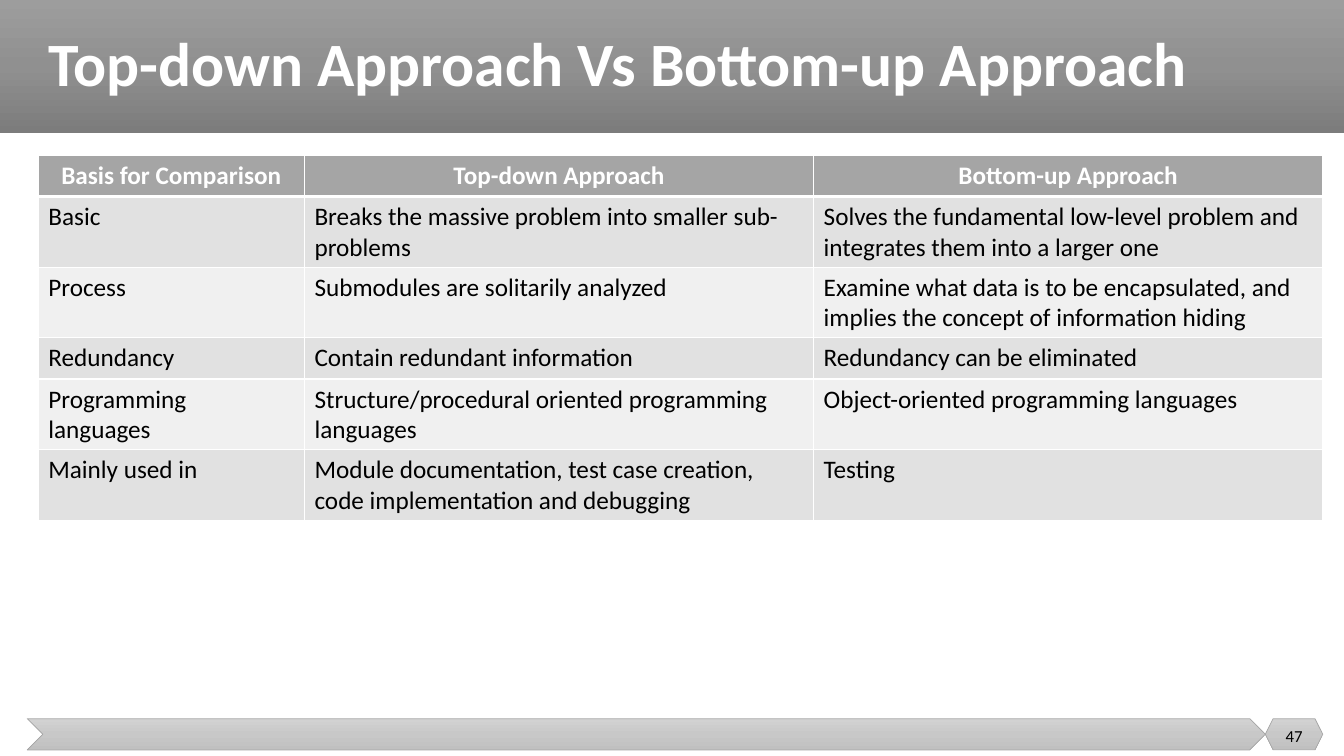
from copy import deepcopy
from dataclasses import dataclass

from lxml.etree import SubElement
from pptx import Presentation
from pptx.dml.color import RGBColor
from pptx.enum.shapes import MSO_SHAPE
from pptx.enum.text import MSO_ANCHOR, PP_ALIGN
from pptx.oxml.ns import qn
from pptx.util import Inches, Pt


@dataclass(frozen=True)
class Theme:
    font: str = "Calibri"
    title_size: int = 44
    table_size: int = 18
    number_size: int = 12
    light: str = "FFFFFF"
    dark: str = "000000"
    accent: str = "A5A5A5"
    bands: tuple = ("E1E1E1", "F0F0F0")
    banner: tuple = ("9D9D9D", "909090", "7C7C7C")
    footer: tuple = ("D2D2D2", "C8C8C8", "C0C0C0")


THEME = Theme()

ROWS = [
    ("Basis for Comparison", "Top-down Approach", "Bottom-up Approach"),
    ("Basic", "Breaks the massive problem into smaller sub-problems",
     "Solves the fundamental low-level problem and integrates them into a larger one"),
    ("Process", "Submodules are solitarily analyzed",
     "Examine what data is to be encapsulated, and implies the concept of information hiding"),
    ("Redundancy", "Contain redundant information", "Redundancy can be eliminated"),
    ("Programming languages", "Structure/procedural oriented programming languages",
     "Object-oriented programming languages"),
    ("Mainly used in",
     "Module documentation, test case creation, code implementation and debugging", "Testing"),
]


def write(tf, text, size, color, bold=False, align=PP_ALIGN.LEFT):
    tf.text = text
    p = tf.paragraphs[0]
    p.alignment = align
    font = p.runs[0].font
    font.name = THEME.font
    font.size = Pt(size)
    font.bold = bold
    font.color.rgb = RGBColor.from_string(color)
    return p


def add_text(s, box, text, size, color, **style):
    tf = s.shapes.add_textbox(*map(Inches, box)).text_frame
    tf.word_wrap = True
    tf.vertical_anchor = MSO_ANCHOR.MIDDLE
    return write(tf, text, size, color, **style)


def add_gradient_shape(s, kind, box, colors, line=None):
    sp = s.shapes.add_shape(kind, *map(Inches, box))
    sp.shadow.inherit = False
    sp.fill.gradient()
    sp.fill.gradient_angle = 270
    stops = sp._element.spPr.find(".//" + qn("a:gsLst"))
    stops.append(deepcopy(stops[0]))
    for i, (stop, color) in enumerate(zip(sp.fill.gradient_stops, colors)):
        stop.position = i / (len(colors) - 1)
        stop.color.rgb = RGBColor.from_string(color)
    if line:
        sp.line.color.rgb = RGBColor.from_string(line)
        sp.line.width = Pt(0.5)
    else:
        sp.line.fill.background()


def add_banner(s, box, title):
    left, top, width, height = box
    add_gradient_shape(s, MSO_SHAPE.RECTANGLE, box, THEME.banner)
    p = add_text(s, (left + 0.38, top, width - 0.59, height), title,
                 THEME.title_size, THEME.light, bold=True)
    p.line_spacing = 0.9


def set_borders(cell, widths):
    tcPr = cell._tc.get_or_add_tcPr()
    for side, width in widths.items():
        ln = SubElement(tcPr, qn("a:ln" + side), w=str(Pt(width)))
        fill = SubElement(ln, qn("a:solidFill"))
        SubElement(fill, qn("a:srgbClr"), val=THEME.light)


def add_comparison(s, box, rows):
    left, top, width, row_height = box
    table = s.shapes.add_table(len(rows), len(rows[0]), *map(
        Inches, (left, top, width, row_height * len(rows)))).table
    label_width = 2.64
    approach_width = (width - label_width) / 2
    for column, w in zip(table.columns, (label_width, approach_width, approach_width)):
        column.width = Inches(w)
    for i, row in enumerate(rows):
        header = i == 0
        table.rows[i].height = Inches(row_height)
        fill = THEME.accent if header else THEME.bands[(i - 1) % 2]
        borders = {"L": 1, "R": 1, "T": 3 if i == 1 else 1, "B": 3 if header else 1}
        for j, text in enumerate(row):
            cell = table.cell(i, j)
            set_borders(cell, borders)
            cell.fill.solid()
            cell.fill.fore_color.rgb = RGBColor.from_string(fill)
            write(cell.text_frame, text, THEME.table_size,
                  THEME.light if header else THEME.dark, bold=header,
                  align=PP_ALIGN.CENTER if header else PP_ALIGN.LEFT)


def add_footer(s, box, number):
    left, top, width, height = box
    badge_width = 0.57
    bar_width = width - badge_width
    badge_left = left + bar_width
    add_gradient_shape(s, MSO_SHAPE.CHEVRON, (left, top, bar_width, height),
                       THEME.footer, THEME.accent)
    add_gradient_shape(s, MSO_SHAPE.HEXAGON, (badge_left, top, badge_width, height),
                       THEME.footer, THEME.accent)
    add_text(s, (badge_left, top - 0.03, badge_width, 0.4), number,
             THEME.number_size, THEME.dark, align=PP_ALIGN.CENTER)


def main():
    prs = Presentation()
    prs.slide_width, prs.slide_height = Inches(13.33), Inches(7.5)
    s = prs.slides.add_slide(prs.slide_layouts[6])
    add_banner(s, (0, 0, 13.33, 1.32), "Top-down Approach Vs Bottom-up Approach")
    add_footer(s, (0.27, 7.13, 12.85, 0.31), "47")
    add_comparison(s, (0.38, 1.54, 12.74, 0.41), ROWS)
    prs.save("out.pptx")


if __name__ == "__main__":
    main()
